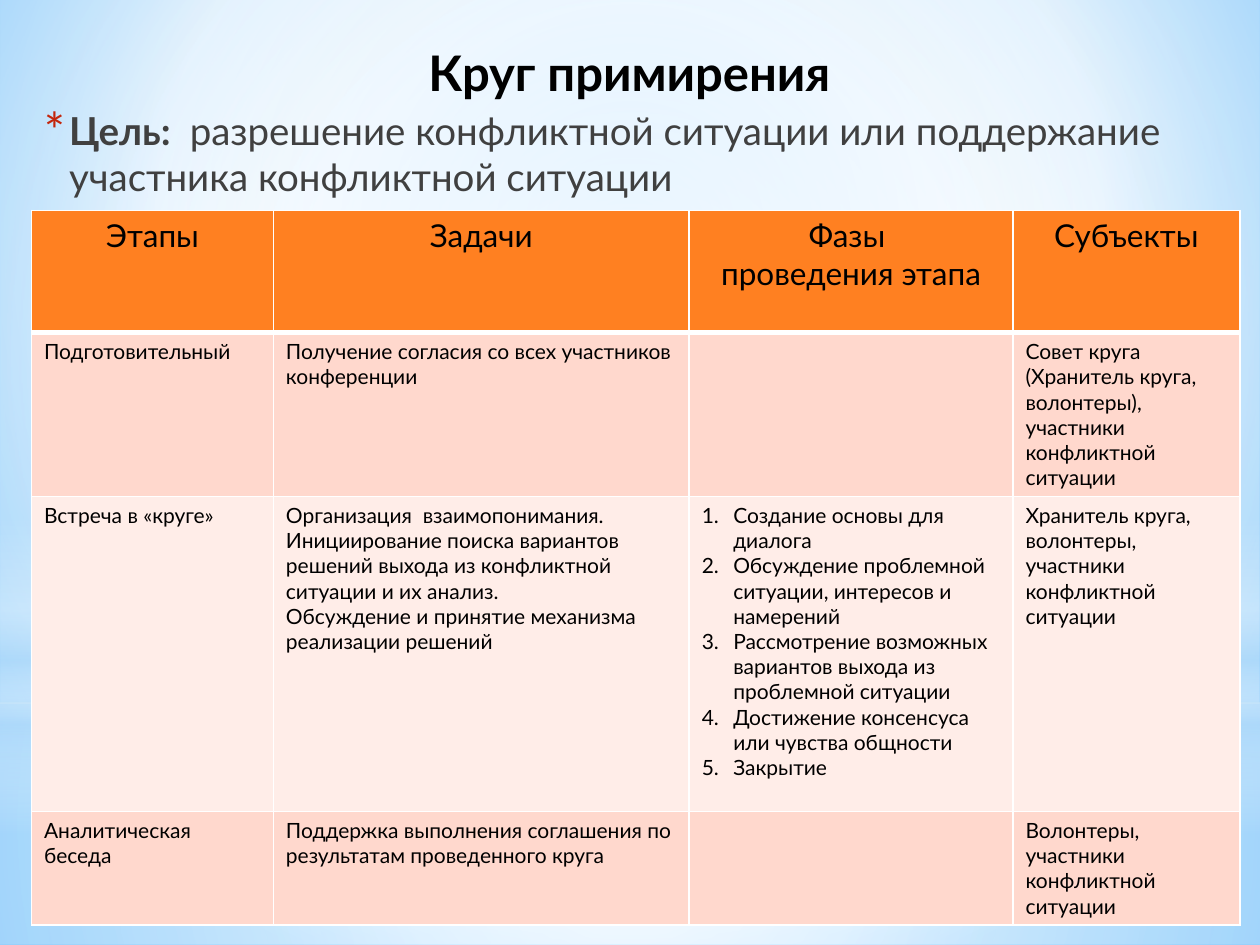
from lxml.etree import SubElement
from pptx import Presentation
from pptx.dml.color import RGBColor
from pptx.enum.shapes import MSO_SHAPE
from pptx.enum.text import MSO_AUTO_SIZE, PP_ALIGN
from pptx.oxml import parse_xml
from pptx.oxml.ns import nsdecls, qn
from pptx.util import Inches, Pt

BLACK = RGBColor(0x00, 0x00, 0x00)
WHITE = RGBColor(0xFF, 0xFF, 0xFF)
GREY = RGBColor(0x40, 0x40, 0x40)
RED = RGBColor(0xC3, 0x26, 0x0C)
ORANGE = RGBColor(0xFF, 0x80, 0x21)
ROSE = RGBColor(0xFF, 0xD8, 0xCD)
BLUSH = RGBColor(0xFF, 0xED, 0xE8)
SKY = RGBColor(0xB4, 0xDC, 0xFA)
PALE = RGBColor(0x9E, 0xD5, 0xFF)
AZURE = RGBColor(0x5B, 0xB9, 0xFF)

CENTER = (50, 50, 50, 50)
COLS = (19.2, 33, 25.7, 18)
ROWS = (9.7, 13, 25, 9)
HEADS = ("Этапы", "Задачи", "Фазы \nпроведения этапа", "Субъекты")
STAGES = (
    ("Подготовительный",
     "Получение согласия со всех участников конференции",
     "",
     "Совет круга (Хранитель круга, волонтеры), участники конфликтной ситуации"),
    ("Встреча в «круге»",
     "Организация  взаимопонимания.\n"
     "Инициирование поиска вариантов решений выхода из конфликтной ситуации и их анализ.\n"
     "Обсуждение и принятие механизма реализации решений",
     "Создание основы для диалога\n"
     "Обсуждение проблемной ситуации, интересов и намерений\n"
     "Рассмотрение возможных вариантов выхода из проблемной ситуации\n"
     "Достижение консенсуса или чувства общности\n"
     "Закрытие",
     "Хранитель круга, волонтеры, участники конфликтной ситуации"),
    ("Аналитическая беседа",
     "Поддержка выполнения соглашения по результатам проведенного круга",
     "",
     "Волонтеры, участники конфликтной ситуации"),
)


class Deck:
    """Slide on a grid of 100 columns by 75 rows, with one text style."""

    font = "Lato"

    def __init__(self):
        self.prs = Presentation()
        self.prs.slide_width, self.prs.slide_height = Inches(10), Inches(7.5)
        self.slide = self.prs.slides.add_slide(self.prs.slide_layouts[6])
        self.unit = self.prs.slide_width / 100

    def place(self, *cells):
        return [round(n * self.unit) for n in cells]

    def blend(self, fill, props, stops, focus=None):
        fill.solid()
        marks = "".join(
            f'<a:gs pos="{pos * 1000}"><a:srgbClr val="{color}">'
            f'<a:alpha val="{alpha * 1000}"/></a:srgbClr></a:gs>'
            for pos, color, alpha in stops)
        if focus:
            sides = " ".join(f'{s}="{n * 1000}"' for s, n in zip("ltrb", focus))
            way = f'<a:path path="circle"><a:fillToRect {sides}/></a:path>'
        else:
            way = '<a:lin ang="5400000" scaled="0"/>'
        grad = parse_xml(f'<a:gradFill rotWithShape="1" {nsdecls("a")}>'
                         f'<a:gsLst>{marks}</a:gsLst>{way}</a:gradFill>')
        solid = props.find(qn("a:solidFill"))
        props.replace(solid, grad)

    def back(self, stops, focus):
        fill = self.slide.background.fill
        fill.solid()
        props = self.slide.element.find(".//" + qn("p:bgPr"))
        self.blend(fill, props, stops, focus)

    def glow(self, box, stops, focus=None, kind=MSO_SHAPE.RECTANGLE):
        shape = self.slide.shapes.add_shape(kind, *self.place(*box))
        shape.shadow.inherit = False
        shape.line.fill.background()
        self.blend(shape.fill, shape.element.spPr, stops, focus)

    def style(self, para, size, color=BLACK, bold=False):
        for run in para.runs:
            font = run.font
            font.name, font.size, font.bold = self.font, Pt(size), bold
            font.color.rgb = color

    def indent(self, para, left, hang):
        props = para._p.get_or_add_pPr()
        props.set("marL", str(Inches(left)))
        props.set("indent", str(-Inches(hang)))
        return props

    def title(self, box, text):
        frame = self.slide.shapes.add_textbox(*self.place(*box)).text_frame
        frame.word_wrap = False
        frame.auto_size = MSO_AUTO_SIZE.SHAPE_TO_FIT_TEXT
        frame.text = text
        para = frame.paragraphs[0]
        para.alignment = PP_ALIGN.CENTER
        self.style(para, 28, bold=True)

    def goal(self, box, label, text):
        frame = self.slide.shapes.add_textbox(*self.place(*box)).text_frame
        frame.word_wrap = True
        para = frame.paragraphs[0]
        for part in (label, text):
            para.add_run().text = part
        self.style(para, 22, GREY)
        para.runs[0].font.bold = True
        para.space_after = Pt(3)
        props = self.indent(para, 0.25, 0.2)
        tint = SubElement(props, qn("a:buClr"))
        SubElement(tint, qn("a:srgbClr"), val=str(RED))
        SubElement(props, qn("a:buSzPct"), val="130000")
        SubElement(props, qn("a:buFont"), typeface=self.font)
        SubElement(props, qn("a:buChar"), char="*")

    def edge(self, cell, low):
        props = cell._tc.get_or_add_tcPr()
        for spot, (side, wide) in enumerate(zip("LRTB", (1, 1, 1, low))):
            props.insert(spot, parse_xml(
                f'<a:ln{side} w="{Pt(wide)}" {nsdecls("a")}><a:solidFill>'
                f'<a:srgbClr val="{WHITE}"/></a:solidFill></a:ln{side}>'))

    def cell(self, cell, text, fill, head, steps):
        cell.fill.solid()
        cell.fill.fore_color.rgb = fill
        self.edge(cell, 3 if head else 1)
        cell.text_frame.text = text
        for para in cell.text_frame.paragraphs:
            self.style(para, 18 if head else 12)
            if head:
                para.alignment = PP_ALIGN.CENTER
            elif steps and text:
                props = self.indent(para, 0.25, 0.25)
                SubElement(props, qn("a:buFont"), typeface=self.font)
                SubElement(props, qn("a:buAutoNum"), type="arabicPeriod")

    def table(self, left, top, data):
        box = self.place(left, top, sum(COLS), sum(ROWS))
        grid = self.slide.shapes.add_table(len(ROWS), len(COLS), *box).table
        for col, wide in zip(grid.columns, self.place(*COLS)):
            col.width = wide
        for row, high in zip(grid.rows, self.place(*ROWS)):
            row.height = high
        for r, line in enumerate(data):
            fill = ORANGE if r == 0 else (BLUSH, ROSE)[r % 2]
            for c, text in enumerate(line):
                self.cell(grid.cell(r, c), text, fill, r == 0, c == 2)


def main():
    deck = Deck()
    deck.back([(0, PALE, 100), (60, WHITE, 100), (100, AZURE, 100)], (20, 10, 20, 60))
    deck.glow((0, 55.8, 100, 19.2),
              [(0, WHITE, 91), (37, WHITE, 76), (100, SKY, 79)], CENTER)
    deck.glow((0, 0, 100, 55.8),
              [(0, WHITE, 89), (48, WHITE, 62), (100, SKY, 79)], CENTER)
    deck.glow((0, 41.2, 100, 25),
              [(0, WHITE, 0), (29, WHITE, 30), (45, SKY, 40),
               (55, WHITE, 26), (65, SKY, 60), (100, WHITE, 0)])
    deck.glow((0, 17.5, 100, 55.8), [(0, WHITE, 100), (56, WHITE, 0)],
              CENTER, MSO_SHAPE.OVAL)
    deck.goal((2, 8, 96.1, 9.8), "Цель: ",
              " разрешение конфликтной ситуации или поддержание "
              "участника конфликтной ситуации")
    deck.title((32.2, 2.9, 35.5, 5.7), "Круг примирения")
    deck.table(2.5, 16.7, (HEADS, *STAGES))
    deck.prs.save("out.pptx")


if __name__ == "__main__":
    main()
